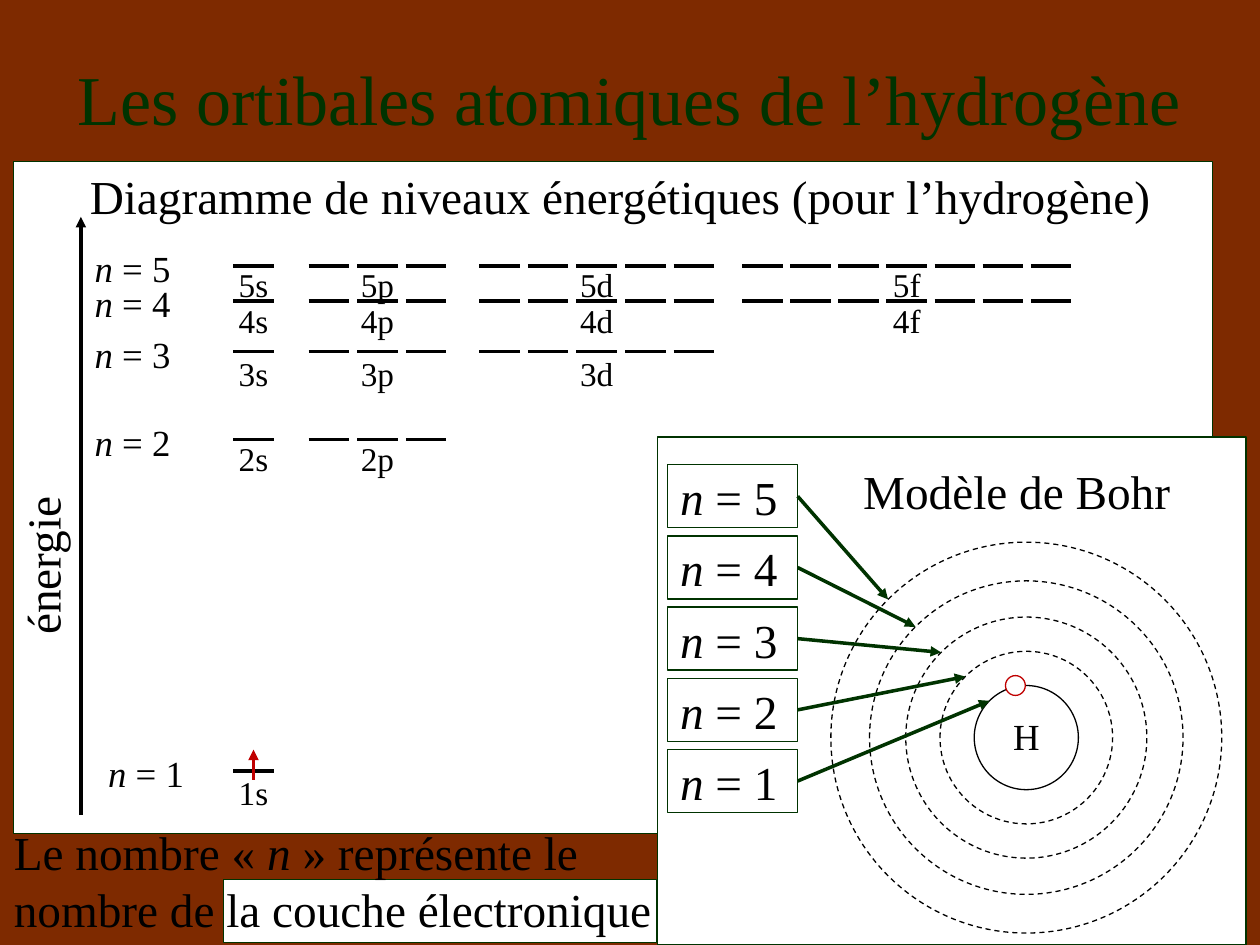
"""Build a slide on the atomic orbitals of hydrogen and its Bohr model."""
import math
import pptx
import pptx.util
import pptx.dml.color
import pptx.enum.dml
import pptx.enum.shapes
import pptx.enum.text
import pptx.oxml.ns
from lxml import etree

TITLE = "Les ortibales atomiques de l’hydrogène"
HEAD = "Diagramme de niveaux énergétiques (pour l’hydrogène)"
AXIS = "énergie"
BOHR = "Modèle de Bohr"
ATOM = "H"
NOTE = [("Le nombre « ", False), ("n", True),
        (" » représente le nombre de la couche électronique", False)]

# n: label left, line height, drop from line to orbital label
LEVELS = {1: (1.93, 15.54, -0.1), 2: (1.66, 8.86, -0.15),
          3: (1.66, 7.09, -0.1), 4: (1.66, 6.07, -0.15),
          5: (1.66, 5.36, -0.15)}
# name, left, count, pitch
SHELLS = [("s", 4.7, 1, 0.98), ("p", 6.22, 3, 0.98),
          ("d", 9.66, 5, 0.98), ("f", 14.96, 7, 0.97)]
DASH = 0.82
RINGS = {1: 1.05, 2: 1.74, 3: 2.43, 4: 3.16, 5: 3.94}
CORE = (20.69, 14.87)
TAG = {"left": 13.46, "top": 15.11, "wide": 2.62, "high": 1.27, "pitch": 1.435}

THEME = {"font": "Times New Roman", "back": "7E2A00", "ink": "000000",
         "green": "003300", "red": "C00000", "white": "FFFFFF",
         "title": 40, "large": 27, "mid": 21, "small": 19,
         "thin": 0.75, "thick": 2}

Cm = pptx.util.Cm
KIND = pptx.enum.shapes.MSO_SHAPE
MID = pptx.enum.text.PP_ALIGN.CENTER

deck = pptx.Presentation()
deck.slide_width, deck.slide_height = Cm(25.4), Cm(19.05)
slide = deck.slides.add_slide(deck.slide_layouts[5])


def tint(name):
    return pptx.dml.color.RGBColor.from_string(THEME[name])


def style(run, size, ink="ink", slant=False):
    run.font.name = THEME["font"]
    run.font.size = pptx.util.Pt(THEME[size])
    run.font.color.rgb = tint(ink)
    run.font.italic = slant


def write(parts, x, y, wide, high, size, align=None, turn=0):
    box = slide.shapes.add_textbox(Cm(x), Cm(y), Cm(wide), Cm(high))
    box.rotation = turn
    box.text_frame.word_wrap = True
    para = box.text_frame.paragraphs[0]
    para.alignment = align
    for text, slant in parts:
        run = para.add_run()
        run.text = text
        style(run, size, slant=slant)


def plain(text, *place, **more):
    write([(text, False)], *place, **more)


def level(n, *place):
    write([("n", True), (f" = {n}", False)], *place)


def shape(kind, x, y, wide, high, edge="green", fill=None, dash=False):
    form = slide.shapes.add_shape(kind, Cm(x), Cm(y), Cm(wide), Cm(high))
    form.shadow.inherit = False
    if fill:
        form.fill.solid()
        form.fill.fore_color.rgb = tint(fill)
    else:
        form.fill.background()
    form.line.color.rgb = tint(edge)
    form.line.width = pptx.util.Pt(THEME["thin"])
    if dash:
        form.line.dash_style = pptx.enum.dml.MSO_LINE.DASH


def disc(x, y, rad, **look):
    shape(KIND.OVAL, x - rad, y - rad, 2 * rad, 2 * rad, **look)


def line(x1, y1, x2, y2, ink="ink", arrow=True):
    kind = pptx.enum.shapes.MSO_CONNECTOR.STRAIGHT
    link = slide.shapes.add_connector(kind, Cm(x1), Cm(y1), Cm(x2), Cm(y2))
    link.line.color.rgb = tint(ink)
    link.line.width = pptx.util.Pt(THEME["thick"])
    qn = pptx.oxml.ns.qn
    if arrow:
        etree.SubElement(link.line._get_or_add_ln(), qn("a:tailEnd"), type="triangle")
    etree.SubElement(link._element.spPr, qn("a:effectLst"))


def draw_title():
    head = slide.shapes.title
    head.left, head.top = Cm(-0.05), Cm(1.27)
    head.width, head.height = Cm(25.48), Cm(1.4)
    head.text_frame.text = TITLE
    head.text_frame.vertical_anchor = pptx.enum.text.MSO_ANCHOR.MIDDLE
    para = head.text_frame.paragraphs[0]
    para.alignment = MID
    style(para.runs[0], "title", "green")


def draw_levels():
    shape(KIND.RECTANGLE, 0.28, 3.25, 24.16, 13.56, fill="white")
    plain(HEAD, 0.03, 3.25, 24.94, 1.42, "large", align=MID)
    plain(AXIS, -0.76, 10.34, 3.61, 1.8, "large", turn=270)
    line(1.63, 16.43, 1.63, 4.37)
    for n, (left, y, drop) in LEVELS.items():
        level(n, left, y - 0.53, 2.24, 1.04, "mid")
        for name, x, count, pitch in SHELLS[:n]:
            for i in range(count):
                line(x + i * pitch, y, x + i * pitch + DASH, y, arrow=False)
            mid = x + ((count - 1) * pitch + DASH) / 2
            plain(f"{n}{name}", mid - 0.69, y + drop, 1.38, 1.04, "small", align=MID)
    line(5.11, 15.72, 5.11, 15.11, "red")


def draw_bohr():
    shape(KIND.RECTANGLE, 13.26, 8.81, 11.86, 10.24, fill="white")
    plain(BOHR, 17.15, 9.19, 7.32, 1.8, "large")
    x, y = CORE
    plain(ATOM, x - 0.83, y - 0.6, 1.66, 1.19, "mid", align=MID)
    for n, rad in RINGS.items():
        disc(x, y, rad, edge="ink", dash=n > 1)
    disc(20.47, 13.82, 0.2, edge="red", fill="white")
    left, wide, high = TAG["left"], TAG["wide"], TAG["high"]
    for n, rad in RINGS.items():
        top = TAG["top"] - (n - 1) * TAG["pitch"]
        level(n, left, top - 0.05, wide, 1.4, "large")
        shape(KIND.RECTANGLE, left, top, wide, high)
        reach = rad * math.sqrt(0.5)
        line(left + wide, top + high / 2, x - reach, y - reach, "green")


def draw_note():
    shape(KIND.RECTANGLE, 4.5, 17.73, 8.74, 1.27, fill="white")
    write(NOTE, 0.03, 16.48, 13.51, 2.51, "large")


def main():
    slide.background.fill.solid()
    slide.background.fill.fore_color.rgb = tint("back")
    draw_title()
    draw_levels()
    draw_bohr()
    draw_note()
    deck.save("out.pptx")


if __name__ == "__main__":
    main()
